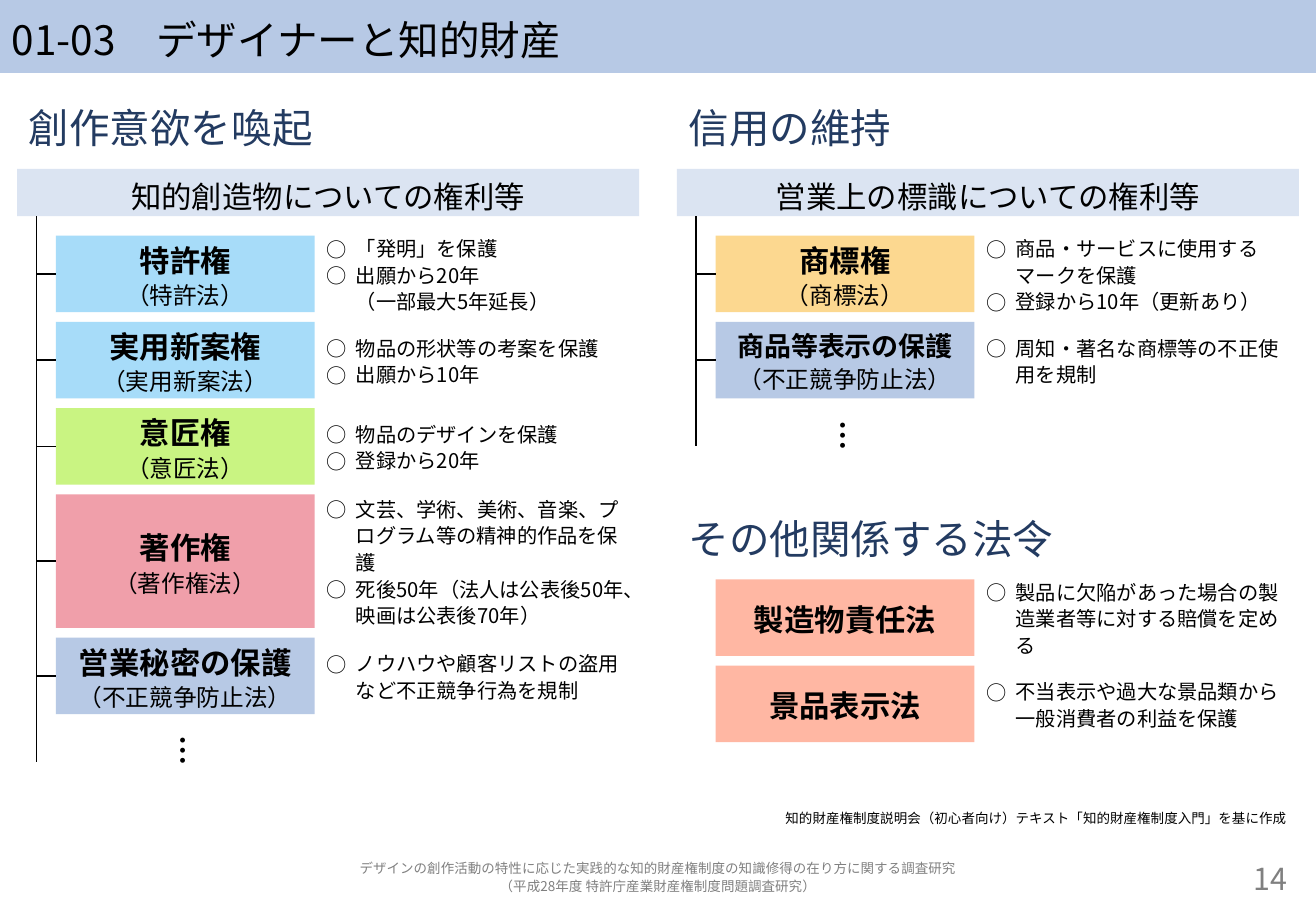
from copy import deepcopy

from lxml.etree import SubElement
from pptx import Presentation
from pptx.dml.color import RGBColor
from pptx.enum.shapes import MSO_CONNECTOR as Connector, MSO_SHAPE as Shape
from pptx.enum.text import MSO_ANCHOR as Anchor, PP_ALIGN as Align
from pptx.oxml.ns import qn
from pptx.util import Inches, Pt

FONT = "Noto Sans CJK JP"
BLACK = RGBColor(0x00, 0x00, 0x00)
GRAY = RGBColor(0x80, 0x80, 0x80)
NAVY = RGBColor(0x23, 0x3B, 0x61)
BLUE = RGBColor(0xB7, 0xC9, 0xE5)
PALE_BLUE = RGBColor(0xDB, 0xE4, 0xF2)
SKY = RGBColor(0xA7, 0xDC, 0xF9)
GREEN = RGBColor(0xC9, 0xF4, 0x82)
PINK = RGBColor(0xF0, 0x9F, 0xAA)
YELLOW = RGBColor(0xFC, 0xD8, 0x90)
SALMON = RGBColor(0xFF, 0xB7, 0xA3)

SLIDE_WIDTH, SLIDE_HEIGHT = 10.83, 7.5
LEFT_COLUMN, RIGHT_COLUMN = 0.14, 5.57
COLUMN_WIDTH, FULL_WIDTH = 5.12, 10.55
BAND_TOP, BAND_HEIGHT = 1.39, 0.39
BAND_BOTTOM = BAND_TOP + BAND_HEIGHT
RIGHTS_TOP, OTHER_LAWS_TOP = 1.94, 4.77
RAIL_INDENT, BOX_INDENT = 0.16, 0.32
BOX_WIDTH, BOX_HEIGHT, TALL_BOX_HEIGHT = 2.13, 0.63, 1.1
BOX_GAP = 0.08
NOTE_WIDTH = COLUMN_WIDTH - BOX_INDENT - BOX_WIDTH

# Each row: name, name size, law, box colour, box height, notes
CREATION_RIGHTS = [
    ("特許権", 18, "（特許法）", SKY, BOX_HEIGHT,
     ["「発明」を保護", "出願から20年\v（一部最大5年延長）"]),
    ("実用新案権", 18, "（実用新案法）", SKY, BOX_HEIGHT,
     ["物品の形状等の考案を保護", "出願から10年"]),
    ("意匠権", 18, "（意匠法）", GREEN, BOX_HEIGHT,
     ["物品のデザインを保護", "登録から20年"]),
    ("著作権", 18, "（著作権法）", PINK, TALL_BOX_HEIGHT,
     ["文芸、学術、美術、音楽、プログラム等の精神的作品を保護",
      "死後50年（法人は公表後50年、映画は公表後70年）"]),
    ("営業秘密の保護", 18, "（不正競争防止法）", BLUE, BOX_HEIGHT,
     ["ノウハウや顧客リストの盗用など不正競争行為を規制"]),
]
SIGN_RIGHTS = [
    ("商標権", 18, "（商標法）", YELLOW, BOX_HEIGHT,
     ["商品・サービスに使用するマークを保護", "登録から10年（更新あり）"]),
    ("商品等表示の保護", 16, "（不正競争防止法）", BLUE, BOX_HEIGHT,
     ["周知・著名な商標等の不正使用を規制"]),
]
OTHER_LAWS = [
    ("製造物責任法", 18, None, SALMON, BOX_HEIGHT,
     ["製品に欠陥があった場合の製造業者等に対する賠償を定める"]),
    ("景品表示法", 18, None, SALMON, BOX_HEIGHT,
     ["不当表示や過大な景品類から一般消費者の利益を保護"]),
]


def style_runs(paragraph, size, color, bold):
    for run in paragraph.runs:
        run.font.color.rgb = color
        for name, value in {"name": FONT, "size": Pt(size), "bold": bold}.items():
            setattr(run.font, name, value)
        properties = run.font._element
        SubElement(properties, qn("a:ea"), typeface=FONT)
        for line_break in paragraph._p.findall(qn("a:br")):
            if line_break.find(qn("a:rPr")) is None:
                line_break.append(deepcopy(properties))


def add_bullet(paragraph):
    properties = paragraph._p.get_or_add_pPr()
    indent = Inches(0.24)
    properties.set("marL", str(indent))
    properties.set("indent", str(-indent))
    SubElement(properties, qn("a:buFont"), typeface=FONT)
    SubElement(properties, qn("a:buChar"), char="○")


def write(shape, lines, align=Align.LEFT, anchor=Anchor.MIDDLE, spacing=1.1,
          bullets=False):
    """Fill the shape with lines of (text, size, colour, bold)."""
    frame = shape.text_frame
    frame.word_wrap = True
    frame.vertical_anchor = anchor
    for index, (text, size, color, bold) in enumerate(lines):
        paragraph = frame.add_paragraph() if index else frame.paragraphs[0]
        paragraph.text = text
        paragraph.alignment = align
        paragraph.line_spacing = spacing
        if bullets:
            add_bullet(paragraph)
        style_runs(paragraph, size, color, bold)


def add_text(slide, left, top, width, height, lines, **text_format):
    box = slide.shapes.add_textbox(*map(Inches, (left, top, width, height)))
    write(box, lines, **text_format)
    return box


def add_box(slide, left, top, width, height, fill, lines, **text_format):
    box = slide.shapes.add_shape(
        Shape.RECTANGLE, *map(Inches, (left, top, width, height)))
    box.shadow.inherit = False
    box.fill.solid()
    box.fill.fore_color.rgb = fill
    box.line.fill.background()
    write(box, lines, **text_format)


def add_line(slide, kind, *ends):
    line = slide.shapes.add_connector(kind, *map(Inches, ends))
    line.line.color.rgb = BLACK
    line.line.width = Pt(1)
    SubElement(line._element.spPr, qn("a:effectLst"))
    return line


def add_branch(slide, rail, top, box_left, middle):
    """Run down the rail, then turn right into the box: a quarter-turned elbow."""
    center_x, center_y = (rail + box_left) / 2, (top + middle) / 2
    half_run, half_rise = (middle - top) / 2, (box_left - rail) / 2
    branch = add_line(slide, Connector.ELBOW,
                      center_x + half_run, center_y - half_rise,
                      center_x - half_run, center_y + half_rise)
    properties = branch._element.spPr
    properties.find(qn("a:xfrm")).set("rot", str(270 * 60000))
    properties.find(qn("a:prstGeom")).set("prst", "bentConnector2")


def add_heading(slide, left, top, text):
    add_text(slide, left, top, COLUMN_WIDTH, 0.47, [(text, 24, NAVY, False)],
             anchor=Anchor.TOP)


def add_rows(slide, column, top, rows):
    """Stack the boxes with their notes; return box middles and the next top."""
    left = column + BOX_INDENT
    middles = []
    for name, size, law, fill, height, notes in rows:
        lines = [(name, size, BLACK, True)]
        if law:
            lines.append((law, 14, BLACK, False))
        add_box(slide, left, top, BOX_WIDTH, height, fill, lines, align=Align.CENTER)
        add_text(slide, left + BOX_WIDTH, top, NOTE_WIDTH, height,
                 [(note, 12, BLACK, False) for note in notes], bullets=True)
        middles.append(top + height / 2)
        top += height + BOX_GAP
    return middles, top


def add_rights(slide, column, heading, band, rows):
    """Heading and band, with a tree of rights that trails off in dots."""
    add_heading(slide, column, 0.76, heading)
    add_box(slide, column, BAND_TOP, COLUMN_WIDTH, BAND_HEIGHT, PALE_BLUE,
            [(band, 18, BLACK, False)], align=Align.CENTER, anchor=Anchor.TOP)
    middles, dots_top = add_rows(slide, column, RIGHTS_TOP, rows)
    rail, box_left = column + RAIL_INDENT, column + BOX_INDENT
    for middle in middles:
        add_branch(slide, rail, BAND_BOTTOM, box_left, middle)
    add_line(slide, Connector.STRAIGHT, rail, BAND_BOTTOM,
             rail, dots_top + BOX_HEIGHT / 2)
    dots = add_text(slide, box_left, dots_top, BOX_WIDTH, BOX_HEIGHT,
                    [("…", 18, BLACK, True)], align=Align.CENTER)
    dots.text_frame._txBody.bodyPr.set("vert", "eaVert")


def add_footer(slide):
    add_text(slide, LEFT_COLUMN, 6.58, FULL_WIDTH, 0.31,
             [("知的財産権制度説明会（初心者向け）テキスト「知的財産権制度入門」を基に作成",
               8, BLACK, False)], align=Align.RIGHT, spacing=1.0)
    study = ["デザインの創作活動の特性に応じた実践的な知的財産権制度の知識修得の在り方に関する調査研究",
             "（平成28年度 特許庁産業財産権制度問題調査研究）"]
    add_text(slide, LEFT_COLUMN, 7.06, FULL_WIDTH, 0.31,
             [(line, 8, GRAY, False) for line in study], align=Align.CENTER)
    add_text(slide, 9.35, 7.06, 1.34, 0.31, [("14", 18, GRAY, False)],
             align=Align.RIGHT)


def main():
    presentation = Presentation()
    presentation.slide_width = Inches(SLIDE_WIDTH)
    presentation.slide_height = Inches(SLIDE_HEIGHT)
    slide = presentation.slides.add_slide(presentation.slide_layouts[6])
    add_box(slide, 0, 0, SLIDE_WIDTH, 0.6, BLUE,
            [("01-03　デザイナーと知的財産", 24, BLACK, False)])
    add_rights(slide, LEFT_COLUMN, "創作意欲を喚起", "知的創造物についての権利等",
               CREATION_RIGHTS)
    add_rights(slide, RIGHT_COLUMN, "信用の維持", "営業上の標識についての権利等",
               SIGN_RIGHTS)
    add_heading(slide, RIGHT_COLUMN, 4.14, "その他関係する法令")
    add_rows(slide, RIGHT_COLUMN, OTHER_LAWS_TOP, OTHER_LAWS)
    add_footer(slide)
    presentation.save("out.pptx")


if __name__ == "__main__":
    main()
